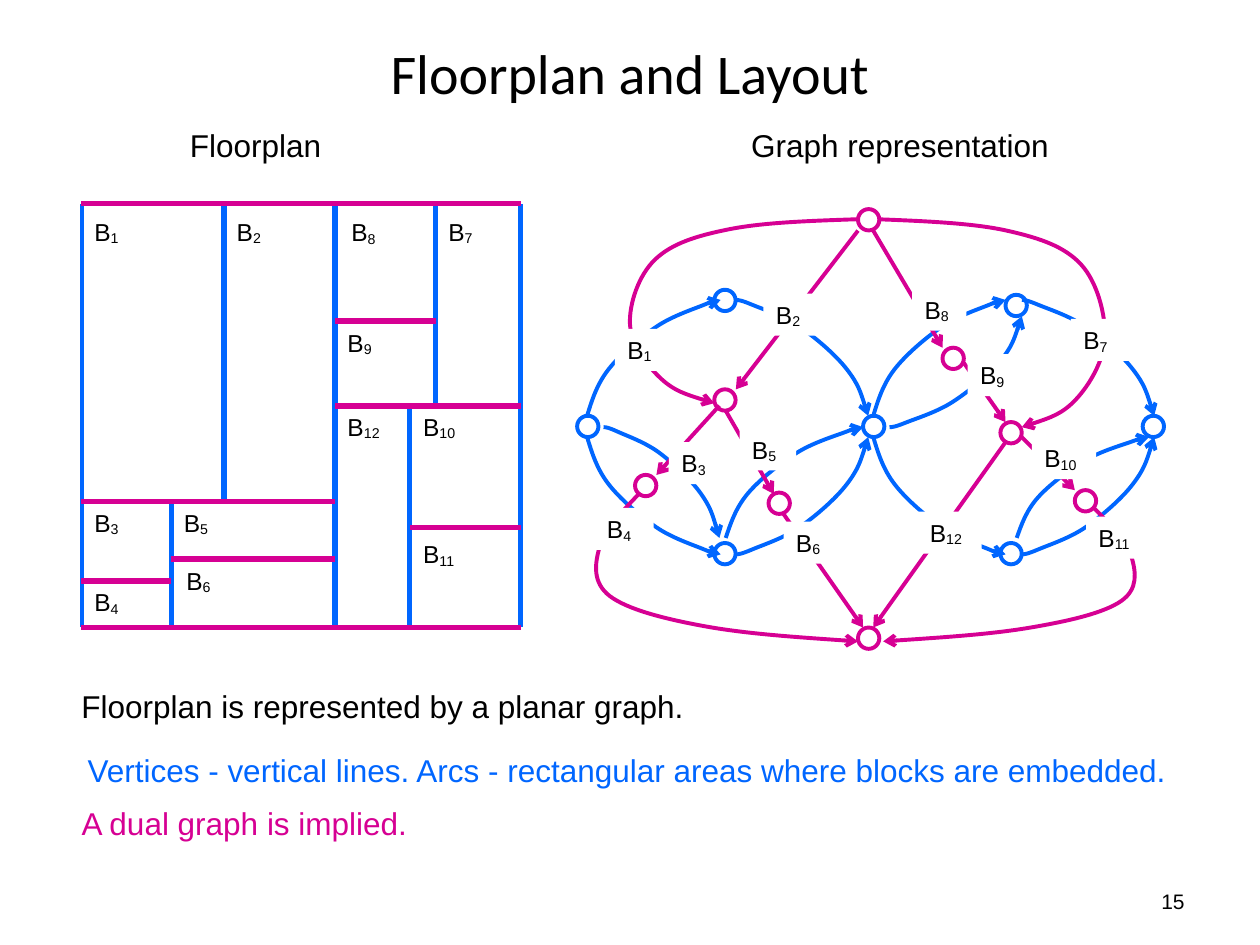
from lxml import etree
from pptx import Presentation
from pptx.dml.color import RGBColor
from pptx.enum.shapes import MSO_CONNECTOR, MSO_SHAPE
from pptx.enum.text import MSO_ANCHOR, PP_ALIGN
from pptx.oxml.ns import qn
from pptx.util import Pt

STRAIGHT, OVAL = MSO_CONNECTOR.STRAIGHT, MSO_SHAPE.OVAL
LEFT, CENTER, RIGHT = PP_ALIGN.LEFT, PP_ALIGN.CENTER, PP_ALIGN.RIGHT
MIDDLE = MSO_ANCHOR.MIDDLE
BLUE, MAGENTA, BLACK, WHITE = "0066FF", "D60093", "000000", "FFFFFF"

TITLE = "Floorplan and Layout"
# text, left, top, width, height, format
TEXTS = [
    ("Floorplan", 92, 68.5, 108, 29, dict(align=CENTER)),
    ("Graph representation", 382.5, 68.5, 263.5, 29, dict(align=CENTER)),
    ("Floorplan is represented by a planar graph.", 39.5, 384.5, 632, 33,
     dict(spacing=1.2)),
    ("Vertices - vertical lines. Arcs - rectangular areas where blocks are embedded.",
     43, 421.2, 643, 33, dict(spacing=1.2, color=BLUE)),
    ("A dual graph is implied.", 39.5, 451.5, 646.5, 33,
     dict(spacing=1.2, color=MAGENTA)),
    ("15", 516, 500.4, 168, 28.8, dict(size=12, align=RIGHT, anchor=MIDDLE)),
]

# Floorplan walls: (x, top, bottom) and (y, left, right)
VERTICAL = [(46.8, 116.5, 358.5), (191.5, 116.5, 358.5), (128, 116.5, 286.5),
            (98, 286.5, 358.5), (249, 116.5, 232), (234, 232, 358.5),
            (297.5, 116.5, 358.5)]
HORIZONTAL = [(301.5, 234, 297.5), (183.5, 191.5, 249), (332, 46.3, 98),
              (319.5, 98, 191.5), (232, 191.5, 297.5), (286.5, 46.3, 191.5),
              (358.5, 46.3, 297.5), (116.5, 46.3, 297.5)]
# block number: (left, top)
FLOOR_LABELS = {
    1: (46.8, 120.2), 2: (128.2, 120.2), 3: (46.8, 286.6), 4: (46.8, 332),
    5: (98, 286.6), 6: (99.4, 319.7), 7: (249.1, 120.2), 8: (193.7, 120.5),
    9: (191.5, 183.6), 10: (234.7, 231.8), 11: (234.7, 304.6), 12: (191.5, 231.8),
}
# block number: (left, top, width)
GRAPH_LABELS = {
    2: (436.3, 167.8, 33.8), 1: (351.4, 187.9, 31), 10: (589.7, 249.8, 36.7),
    5: (422.6, 244.8, 32.4), 12: (524.2, 292.3, 36.7), 6: (447.8, 298.1, 33.8),
    3: (382.3, 252.7, 31.7), 9: (553, 202.3, 31), 8: (521.3, 164.9, 31),
    7: (612, 182.2, 33.8), 11: (620.6, 295.2, 36.7), 4: (339.8, 290.2, 33.8),
}
LABEL_H = 24

# Graph vertices (left, top)
VERTEX_D = 12.2
BLUE_VERTICES = [(493.2, 237.6), (653, 237.6), (574.6, 168.5), (571.7, 310.3),
                 (329.8, 237.6), (408.2, 310.3), (408.2, 165.6)]
MAGENTA_VERTICES = [(538.6, 198.7), (408.2, 222.5), (439.2, 281.5), (362.9, 271.4),
                    (490.3, 119.5), (490.3, 358.6), (571.7, 241.2), (614.2, 280.1)]
# Every blue arc has one profile, steep at its first point: first, last, arrow end
ARC_PROFILE = [(0, 0), (0.16, 0.4), (0.52, 0.77), (0.88, 0.96), (1, 1)]
BLUE_ARCS = [
    ((499, 237.6), (574.6, 171.4), "tail"), ((499, 249.8), (574.6, 316.8), "tail"),
    ((659.5, 237.6), (583.9, 171.4), "head"), ((659.5, 249.8), (583.9, 316.8), "head"),
    ((335.5, 237.6), (411.8, 171.4), "tail"), ((335.5, 249.8), (411.8, 316.8), "tail"),
    ((496.1, 237.6), (420.5, 171.4), "head"), ((496.1, 249.8), (420.5, 316.8), "head"),
    ((411.1, 307.4), (344.9, 244.1), "head"), ((414.7, 307.4), (493.2, 244.1), "tail"),
    ((581, 307.4), (656.6, 249.8), "tail"), ((583.9, 180.7), (508.3, 244.1), "head"),
]
MAGENTA_ARROWS = [
    (550.8, 207.4, 574.6, 241.2), (490.3, 131.8, 420.5, 222.5),
    (499, 131.8, 538.6, 198.7), (583.9, 249.8, 614.2, 280.1),
    (574.6, 252.7, 499, 358.6), (414.7, 234.7, 442.1, 282.2),
    (447.8, 293.8, 493.2, 358.6), (411.1, 231.8, 375.1, 271.4),
]
MAGENTA_CURVES = [
    [(490.3, 125.3), (416.9, 131), (374.4, 148.3), (360, 185), (377.3, 216), (408.2, 230.4)],
    [(501.8, 125.3), (575.3, 131.8), (617.8, 151.2), (631.4, 193), (614.9, 228.2),
     (583.9, 244.1)],
    [(365.8, 281.5), (342.7, 312.5), (348.5, 340.6), (402.5, 357.8), (490.3, 366.5)],
    [(625, 290.2), (646.6, 318.2), (640.8, 343.4), (589, 358.6), (504.7, 366.5)],
]


def rgb(color):
    return RGBColor.from_string(color)


def style_line(sp, color, width, arrow=None):
    """Set the outline; arrow is "head" or "tail"."""
    sp.line.color.rgb = rgb(color)
    sp.line.width = Pt(width)
    if arrow:
        ln = sp.line._get_or_add_ln()
        etree.SubElement(ln, qn(f"a:{arrow}End"), type="arrow")


def add_line(shapes, x1, y1, x2, y2, color, width, arrow=None):
    sp = shapes.add_connector(STRAIGHT, Pt(x1), Pt(y1), Pt(x2), Pt(y2))
    style_line(sp, color, width, arrow)
    etree.SubElement(sp._element.spPr, qn("a:effectLst"))


def add_vertex(shapes, x, y, color):
    sp = shapes.add_shape(OVAL, Pt(x), Pt(y), Pt(VERTEX_D), Pt(VERTEX_D))
    sp.shadow.inherit = False
    sp.fill.background()
    style_line(sp, color, 2.25)


def bezier_points(knots):
    """Return the control and end points of a smooth curve through the knots."""
    def mix(a, b, t):
        return tuple(u + (v - u) * t for u, v in zip(a, b))

    def shift(p, a, b, k):
        return tuple(u + (w - v) * k for u, v, w in zip(p, a, b))

    last = len(knots) - 1
    points = []
    for i in range(last):
        a, b = knots[i], knots[i + 1]
        c1 = shift(a, knots[i - 1], b, 1 / 6) if i else None
        c2 = shift(b, a, knots[i + 2], -1 / 6) if i + 1 < last else mix(b, c1, 0.5)
        points += [c1 or mix(a, c2, 0.5), c2, b]
    return points


def add_curve(shapes, knots, color, arrow):
    start, *rest = [(Pt(x), Pt(y)) for x, y in [knots[0]] + bezier_points(knots)]
    builder = shapes.build_freeform(*start)
    builder.add_line_segments(rest, close=False)
    sp = builder.convert_to_shape()
    path = sp._element.find(".//" + qn("a:path"))
    segments = path.findall(qn("a:lnTo"))
    for i in range(0, len(segments), 3):
        curve = etree.SubElement(path, qn("a:cubicBezTo"))
        for segment in segments[i:i + 3]:
            curve.append(segment[0])
            path.remove(segment)
    sp.shadow.inherit = False
    sp.fill.background()
    style_line(sp, color, 2.25, arrow)


def add_run(p, text, size, color=BLACK, name="Arial"):
    r = p.add_run()
    r.text = text
    for key, value in dict(size=Pt(size), name=name).items():
        setattr(r.font, key, value)
    r.font.color.rgb = rgb(color)
    return r


def add_box(shapes, x, y, w, h):
    sp = shapes.add_textbox(Pt(x), Pt(y), Pt(w), Pt(h))
    sp.text_frame.word_wrap = True
    return sp


def add_text(shapes, text, x, y, w, h, size=18, color=BLACK, align=LEFT,
             spacing=1.0, anchor=None):
    tf = add_box(shapes, x, y, w, h).text_frame
    tf.vertical_anchor = anchor
    p = tf.paragraphs[0]
    p.alignment, p.line_spacing = align, spacing
    add_run(p, text, size, color)


def add_label(shapes, number, x, y, w=39, fill=None):
    sp = add_box(shapes, x, y, w, LABEL_H)
    if fill:
        sp.fill.solid()
        sp.fill.fore_color.rgb = rgb(fill)
    p = sp.text_frame.paragraphs[0]
    add_run(p, "B", 14)
    r = add_run(p, str(number), 14)
    r.font._element.set("baseline", "-10000")


prs = Presentation()
prs.slide_width, prs.slide_height = Pt(720), Pt(540)
slide = prs.slides.add_slide(prs.slide_layouts[5])
shapes = slide.shapes

title = shapes.title
title.left, title.top, title.width, title.height = Pt(36), Pt(15.1), Pt(648), Pt(52.6)
title.text_frame.vertical_anchor = MIDDLE
title.text_frame.paragraphs[0].alignment = CENTER
add_run(title.text_frame.paragraphs[0], TITLE, 32, name="Calibri")

plan = shapes.add_group_shape().shapes
for i, (x, top, bottom) in enumerate(VERTICAL):
    add_line(plan, x, top, x, bottom, BLUE, 3 if i else 2.25)
for y, left, right in HORIZONTAL:
    add_line(plan, left, y, right, y, MAGENTA, 3)

graph = shapes.add_group_shape().shapes
for x, y in BLUE_VERTICES:
    add_vertex(graph, x, y, BLUE)
for (x1, y1), (x2, y2), arrow in BLUE_ARCS:
    knots = [(x1 + (x2 - x1) * u, y1 + (y2 - y1) * v) for u, v in ARC_PROFILE]
    add_curve(graph, knots, BLUE, arrow)

dual = shapes.add_group_shape().shapes
for x, y in MAGENTA_VERTICES:
    add_vertex(dual, x, y, MAGENTA)
for ends in MAGENTA_ARROWS:
    add_line(dual, *ends, MAGENTA, 2.25, "tail")
for knots in MAGENTA_CURVES:
    add_curve(dual, knots, MAGENTA, "tail")

for number, place in FLOOR_LABELS.items():
    add_label(shapes, number, *place)
for number, place in GRAPH_LABELS.items():
    add_label(shapes, number, *place, fill=WHITE)
for *place, fmt in TEXTS:
    add_text(shapes, *place, **fmt)

prs.save("out.pptx")
